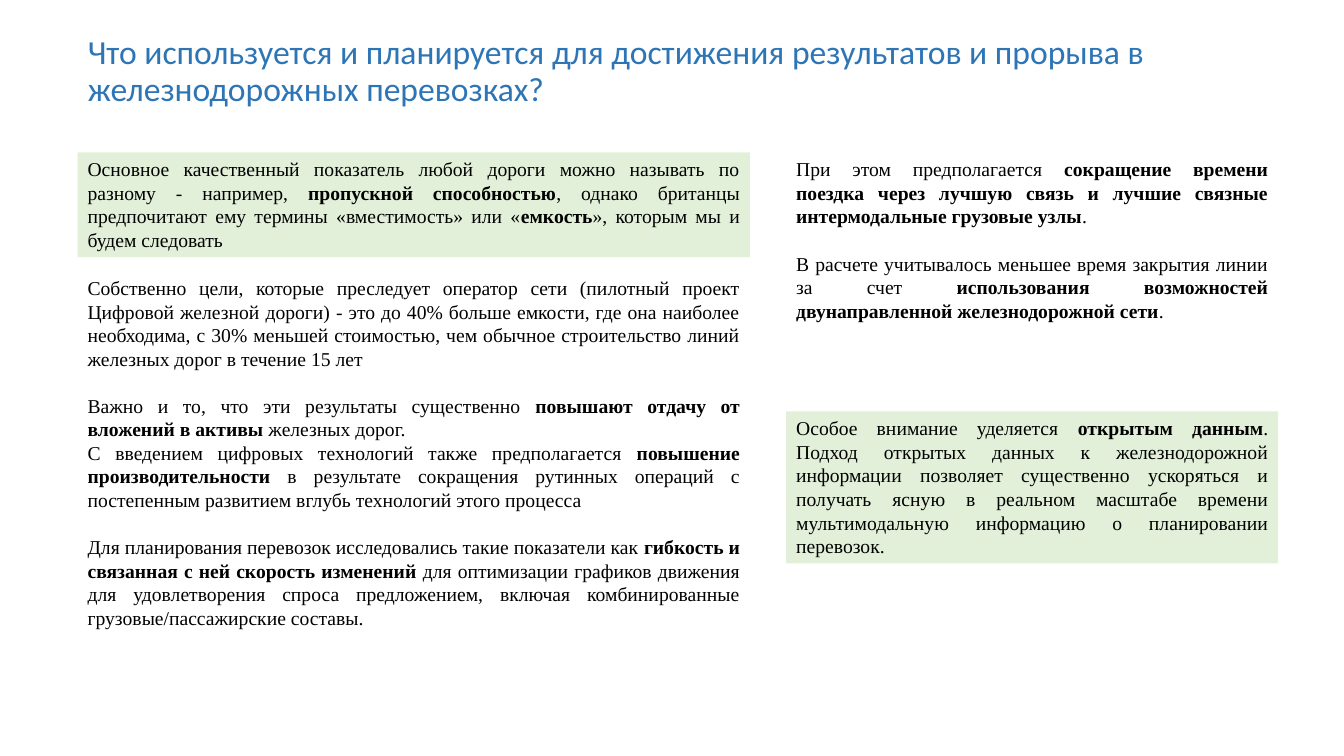
from pptx import Presentation
from pptx.dml.color import RGBColor
from pptx.enum.shapes import MSO_SHAPE
from pptx.enum.text import MSO_ANCHOR, PP_ALIGN
from pptx.util import Pt

BLUE = RGBColor(0x2E, 0x75, 0xB6)
GREEN = RGBColor(0xE2, 0xF0, 0xD9)
BLACK = RGBColor(0, 0, 0)

TITLE = "Что используется и планируется для достижения результатов и прорыва в железнодорожных перевозках?"

MEASURE = [(0, [
    "Основное качественный показатель любой дороги можно называть по разному - например, ",
    "пропускной способностью",
    ", однако британцы предпочитают ему термины «вместимость» или «",
    "емкость",
    "», которым мы и будем следовать"])]
GOALS = [
    (0, ["Собственно цели, которые преследует оператор сети (пилотный проект Цифровой железной дороги) - это до 40% больше емкости, где она наиболее необходима, с 30% меньшей стоимостью, чем обычное строительство линий железных дорог в течение 15 лет"]),
    (1, ["Важно и то, что эти результаты существенно ",
         "повышают отдачу от вложений в активы",
         " железных дорог."]),
    (0, ["С введением цифровых технологий также предполагается ",
         "повышение производительности",
         " в результате сокращения рутинных операций с постепенным развитием вглубь технологий этого процесса"]),
    (1, ["Для планирования перевозок исследовались такие показатели как ",
         "гибкость и связанная с ней скорость изменений",
         " для оптимизации графиков движения для удовлетворения спроса предложением, включая комбинированные грузовые/пассажирские составы."]),
]
TIME = [
    (0, ["При этом предполагается ",
         "сокращение времени поездка через лучшую связь и лучшие связные интермодальные грузовые узлы",
         "."]),
    (1, ["В расчете учитывалось меньшее время закрытия линии за счет ",
         "использования возможностей двунаправленной железнодорожной сети",
         "."]),
]
DATA = [(0, [
    "Особое внимание уделяется ",
    "открытым данным",
    ". Подход открытых данных к железнодорожной информации позволяет существенно ускоряться и получать ясную в реальном масштабе времени мультимодальную информацию о планировании перевозок."])]

LEFT, RIGHT = (55.5, 480.2), (561.6, 351.4)
BOXES = [
    (LEFT, 108.8, 74.9, GREEN, MEASURE),
    (LEFT, 193.6, 278.6, None, GOALS),
    (RIGHT, 108.8, 126, None, TIME),
    (RIGHT, 293.8, 108.7, GREEN, DATA),
]
GAP = 16.9
BODY = {"name": "Times New Roman", "size": Pt(14)}
HEAD = {"name": "Calibri", "size": Pt(24), "bold": False}


def style(font, look, color):
    for key, value in look.items():
        setattr(font, key, value)
    font.color.rgb = color


def place(shape, *box):
    for key, value in zip(("left", "top", "width", "height"), box):
        setattr(shape, key, Pt(value))


def write(frame, paras):
    frame.word_wrap = True
    frame.vertical_anchor = MSO_ANCHOR.TOP
    for i, (gap, parts) in enumerate(paras):
        para = frame.paragraphs[0] if i == 0 else frame.add_paragraph()
        para.alignment = PP_ALIGN.JUSTIFY
        para.space_before = Pt(gap * GAP)
        for j, part in enumerate(parts):
            run = para.add_run()
            run.text = part
            style(run.font, BODY | {"bold": j % 2 == 1}, BLACK)


def main():
    deck = Presentation()
    deck.slide_width, deck.slide_height = Pt(960), Pt(540)
    slide = deck.slides.add_slide(deck.slide_layouts[5])

    title = slide.shapes.title
    place(title, LEFT[0], 15.1, 838.1, 100.1)
    frame = title.text_frame
    frame.text = TITLE
    frame.word_wrap = True
    frame.vertical_anchor = MSO_ANCHOR.MIDDLE
    frame.margin_bottom = Pt(31)
    para = frame.paragraphs[0]
    para.alignment = PP_ALIGN.LEFT
    para.line_spacing = 0.9
    style(para.runs[0].font, HEAD, BLUE)

    for (left, width), top, height, fill, paras in BOXES:
        box = [Pt(n) for n in (left, top, width, height)]
        if fill is None:
            shape = slide.shapes.add_textbox(*box)
        else:
            shape = slide.shapes.add_shape(MSO_SHAPE.RECTANGLE, *box)
            shape.shadow.inherit = False
            shape.fill.solid()
            shape.fill.fore_color.rgb = fill
            shape.line.fill.background()
        write(shape.text_frame, paras)

    deck.save("out.pptx")


if __name__ == "__main__":
    main()
